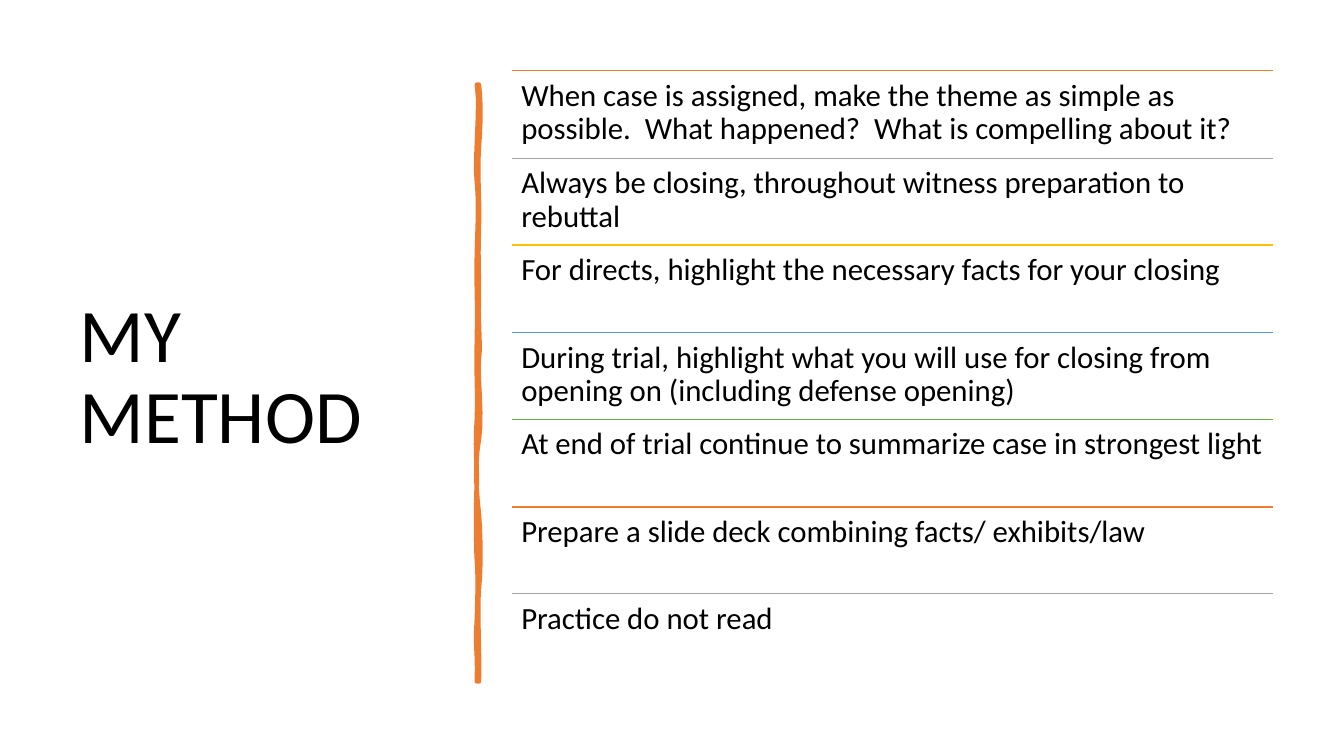
from lxml import etree
from pptx import Presentation
from pptx.dml.color import RGBColor
from pptx.enum.shapes import MSO_CONNECTOR
from pptx.enum.text import MSO_ANCHOR, MSO_AUTO_SIZE, PP_ALIGN
from pptx.oxml.ns import qn
from pptx.util import Pt

PX = 9144  # 100 px to the inch
STRAIGHT = MSO_CONNECTOR.STRAIGHT
LEFT = PP_ALIGN.LEFT
TOP, MIDDLE = MSO_ANCHOR.TOP, MSO_ANCHOR.MIDDLE
NO_FIT = MSO_AUTO_SIZE.NONE

ORANGE, GRAY, GOLD, BLUE, GREEN = "ED7D31", "A5A5A5", "FFC000", "5B9BD5", "70AD47"
STEPS = [
    (ORANGE, "When case is assigned, make the theme as simple as possible.  "
             "What happened?  What is compelling about it?"),
    (GRAY, "Always be closing, throughout witness preparation to rebuttal"),
    (GOLD, "For directs, highlight the necessary facts for your closing"),
    (BLUE, "During trial, highlight what you will use for closing from "
           "opening on (including defense opening)"),
    (GREEN, "At end of trial continue to summarize case in strongest light"),
    (ORANGE, "Prepare a slide deck combining facts/ exhibits/law"),
    (GRAY, "Practice do not read"),
]
STEP_X, STEP_Y, STEP_W, STEP_H = 508, 70, 755, 86

# Brush stroke outline: two control points and an end point per curve
BRUSH_START = (475, 84)
BRUSH_CURVES = [
    ((477, 102), (477, 119), (475, 146)),
    ((473, 173), (476, 195), (475, 226)),
    ((474, 257), (475, 262), (475, 294)),
    ((474, 325), (477, 342), (475, 356)),
    ((473, 370), (479, 414), (475, 436)),
    ((471, 457), (472, 484), (475, 510)),
    ((477, 536), (477, 564), (475, 584)),
    ((473, 603), (476, 650), (475, 676)),
    ((474, 676), (473, 676), (473, 676)),
    ((474, 646), (471, 644), (473, 613)),
    ((474, 583), (474, 570), (473, 557)),
    ((472, 544), (472, 495), (473, 477)),
    ((473, 459), (471, 445), (473, 415)),
    ((474, 386), (472, 373), (473, 335)),
    ((474, 298), (472, 281), (473, 250)),
    ((474, 218), (475, 200), (473, 181)),
    ((470, 163), (477, 104), (473, 84)),
]
CURVE_STEPS = 6


def rgb(color):
    return RGBColor.from_string(color)


def write(sp, text, size, anchor):
    tf = sp.text_frame
    for name, value in dict(word_wrap=True, auto_size=NO_FIT, vertical_anchor=anchor).items():
        setattr(tf, name, value)
    p = tf.paragraphs[0]
    p.alignment = LEFT
    p.line_spacing = 0.9
    r = p.add_run()
    r.text = text
    for name, value in dict(name="Calibri", size=Pt(size)).items():
        setattr(r.font, name, value)
    r.font.color.rgb = rgb("000000")
    return tf


prs = Presentation()
prs.slide_width, prs.slide_height = 1333 * PX, 750 * PX
s = prs.slides.add_slide(prs.slide_layouts[5])

title = s.shapes.title
for name, value in dict(left=69, top=70, width=374, height=611).items():
    setattr(title, name, value * PX)
write(title, "MY METHOD", 54, MIDDLE)

points = []
start = BRUSH_START
for c1, c2, end in BRUSH_CURVES:
    for k in range(1, CURVE_STEPS + 1):
        t = k / CURVE_STEPS
        u = 1 - t
        points.append(tuple(
            PX * (u**3 * a + 3 * u * u * t * b + 3 * u * t * t * c + t**3 * d)
            for a, b, c, d in zip(start, c1, c2, end)))
    start = end
builder = s.shapes.build_freeform(BRUSH_START[0] * PX, BRUSH_START[1] * PX)
builder.add_line_segments(points, close=True)
brush = builder.convert_to_shape()
brush.shadow.inherit = False
brush.fill.solid()
brush.fill.fore_color.rgb = rgb(ORANGE)
brush.line.color.rgb = rgb(ORANGE)
brush.line.width = Pt(3.25)

for i, (color, text) in enumerate(STEPS):
    y = STEP_Y + (173 * i + 1) // 2  # pitch of 86.5 px
    rule = s.shapes.add_connector(
        STRAIGHT, STEP_X * PX, y * PX, (STEP_X + STEP_W) * PX, y * PX)
    rule.line.color.rgb = rgb(color)
    rule.line.width = Pt(1)
    etree.SubElement(rule._element.spPr, qn("a:effectLst"))

    box = s.shapes.add_textbox(STEP_X * PX, y * PX, STEP_W * PX, STEP_H * PX)
    tf = write(box, text, 22, TOP)
    for side in ("left", "top", "right", "bottom"):
        setattr(tf, f"margin_{side}", 9 * PX)

prs.save("out.pptx")
